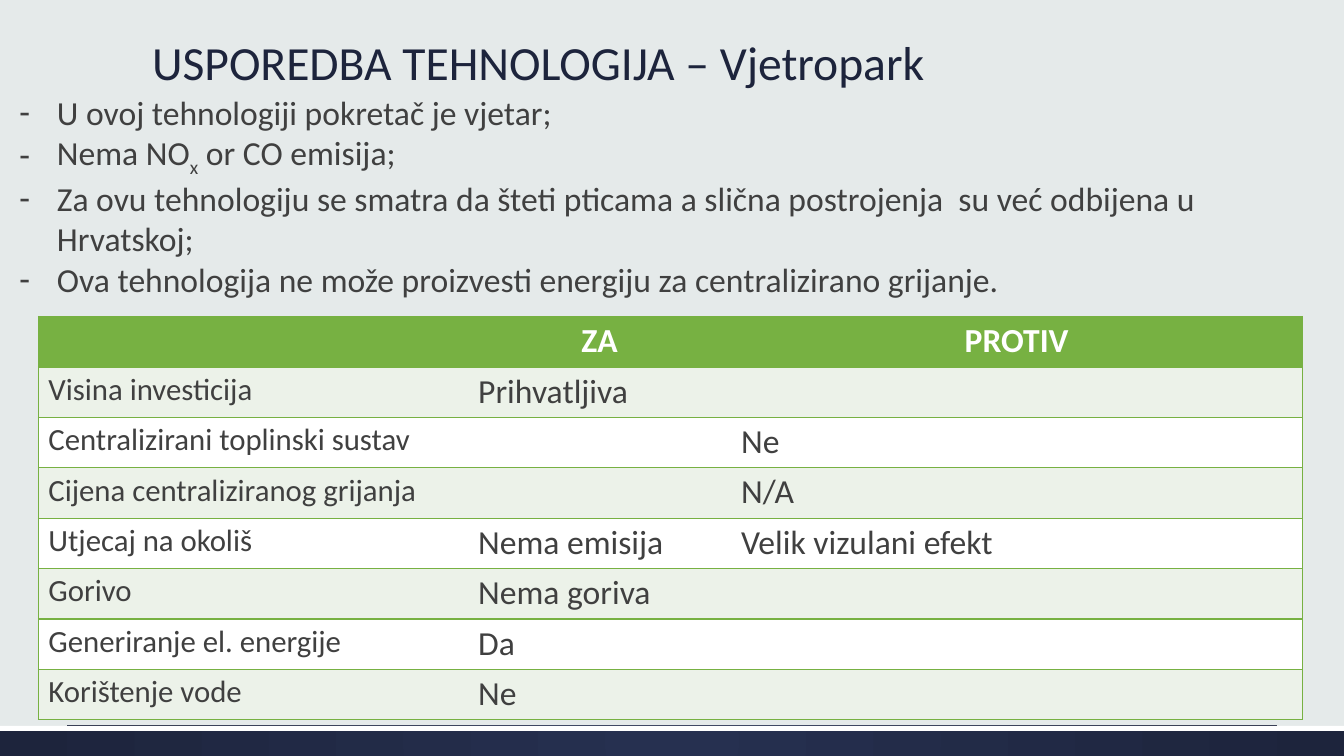
from dataclasses import dataclass

from lxml.etree import SubElement
from pptx import Presentation
from pptx.dml.color import RGBColor as Color
from pptx.enum.shapes import MSO_CONNECTOR as Connector, MSO_SHAPE as Shape
from pptx.enum.text import MSO_ANCHOR as Anchor, MSO_AUTO_SIZE as AutoSize, PP_ALIGN as Align
from pptx.oxml import parse_xml
from pptx.oxml.ns import nsdecls, qn
from pptx.util import Pt


@dataclass(frozen=True)
class Theme:
    """Colours, font and type sizes of the slide."""
    font: str = "Calibri"
    page: str = "E5EAEA"
    navy: str = "1D243C"
    navy_light: str = "263050"
    text: str = "404040"
    green: str = "77B142"
    band: str = "ECF2E9"
    white: str = "FFFFFF"
    title_size: int = 34
    body_size: int = 24
    label_size: int = 22


THEME = Theme()
PAGE_WIDTH, PAGE_HEIGHT = 960, 540
TITLE = "USPOREDBA TEHNOLOGIJA – Vjetropark"
POINTS = [
    ["U ovoj tehnologiji pokretač je vjetar;"],
    ["Nema NO", "x", " or CO emisija;"],
    ["Za ovu tehnologiju se smatra da šteti pticama a slična postrojenja  su već odbijena u Hrvatskoj;"],
    ["Ova tehnologija ne može proizvesti energiju za centralizirano grijanje."],
]
COMPARISON = [
    ("", "ZA", "PROTIV"),
    ("Visina investicija", "Prihvatljiva", ""),
    ("Centralizirani toplinski sustav", "", "Ne"),
    ("Cijena centraliziranog grijanja", "", "N/A"),
    ("Utjecaj na okoliš", "Nema emisija", "Velik vizulani efekt"),
    ("Gorivo", "Nema goriva", ""),
    ("Generiranje el. energije", "Da", ""),
    ("Korištenje vode", "Ne", ""),
]
COLUMN_SHARES = (0.34, 0.208, 0.452)


def rgb(value):
    """Turn a hex string into a colour."""
    return Color.from_string(value)


def place(shape, box):
    """Move a shape to a left, top, width, height box in points."""
    shape.left, shape.top, shape.width, shape.height = map(Pt, box)


def add_run(para, text, size, color, bold=False):
    """Append one formatted run to a paragraph."""
    span = para.add_run()
    span.text = text
    span.font.name, span.font.size, span.font.bold = THEME.font, Pt(size), bold
    span.font.color.rgb = rgb(color)
    return span


def add_title(page, box):
    """Fill the title placeholder."""
    title = page.shapes.title
    place(title, box)
    frame = title.text_frame
    frame.word_wrap, frame.vertical_anchor = True, Anchor.BOTTOM
    frame.auto_size = AutoSize.NONE
    para = frame.paragraphs[0]
    para.alignment, para.line_spacing = Align.LEFT, 0.9
    add_run(para, TITLE, THEME.title_size, THEME.navy)


def add_points(page, box):
    """Fill the body placeholder with the dashed list."""
    body = page.placeholders[1]
    place(body, box)
    frame = body.text_frame
    frame.word_wrap, frame.auto_size = True, AutoSize.NONE
    for index, parts in enumerate(POINTS):
        para = frame.add_paragraph() if index else frame.paragraphs[0]
        properties = para._p.get_or_add_pPr()
        properties.set("marL", str(Pt(27)))
        properties.set("indent", str(Pt(-27)))
        SubElement(properties, qn("a:buChar")).set("char", "-")
        para.space_before = Pt(0)
        for text in parts:
            span = add_run(para, text, THEME.body_size, THEME.text)
            if text == "x":
                span.font._element.set("baseline", "-25000")


def set_borders(cell, visible):
    """Draw the named sides of a cell in green and clear the others."""
    properties = cell._tc.get_or_add_tcPr()
    for index, side in enumerate("LRTB"):
        paint = (f'<a:solidFill><a:srgbClr val="{THEME.green}"/></a:solidFill>'
                 if side in visible else "<a:noFill/>")
        line = f'<a:ln{side} {nsdecls("a")} w="{Pt(1)}">{paint}</a:ln{side}>'
        properties.insert(index, parse_xml(line))


def add_comparison(page, box):
    """Build the table of arguments for and against."""
    row_count, column_count = len(COMPARISON), len(COLUMN_SHARES)
    table = page.shapes.add_table(row_count, column_count, *map(Pt, box)).table
    for column, share in zip(table.columns, COLUMN_SHARES):
        column.width = Pt(box[2] * share)
    for row_index, texts in enumerate(COMPARISON):
        table.rows[row_index].height = Pt(box[3] / row_count)
        header = row_index == 0
        fill = THEME.green if header else (THEME.white, THEME.band)[row_index % 2]
        for column_index, text in enumerate(texts):
            cell = table.cell(row_index, column_index)
            cell.margin_top = cell.margin_bottom = Pt(3)
            cell.fill.solid()
            cell.fill.fore_color.rgb = rgb(fill)
            set_borders(cell, ("LTB", "TB", "RTB")[column_index])
            if text:
                para = cell.text_frame.paragraphs[0]
                para.alignment = Align.CENTER if header else Align.LEFT
                size = THEME.body_size if column_index else THEME.label_size
                add_run(para, text, size, THEME.white if header else THEME.text, header)


def add_bar(page, box):
    """Add a plain white bar without an outline."""
    bar = page.shapes.add_shape(Shape.RECTANGLE, *map(Pt, box))
    bar.shadow.inherit = False
    bar.line.fill.background()
    bar.fill.solid()
    bar.fill.fore_color.rgb = rgb(THEME.white)
    return bar


def add_footer(page, box):
    """Draw the thin rule, the navy band and its white edge."""
    left, top, width, height = box
    rule = page.shapes.add_connector(
        Connector.STRAIGHT, Pt(left + 48), Pt(top), Pt(left + width - 48), Pt(top))
    rule.line.color.rgb, rule.line.width = rgb(THEME.text), Pt(0.75)
    SubElement(rule._element.spPr, qn("a:effectLst"))
    band = add_bar(page, box)
    band.fill.gradient()
    for stop, color in zip(band.fill.gradient_stops, (THEME.navy_light, THEME.navy)):
        stop.color.rgb = rgb(color)
    gradient = band._element.spPr.find(qn("a:gradFill"))
    gradient.replace(gradient.find(qn("a:lin")), parse_xml(
        f'<a:path {nsdecls("a")} path="circle">'
        '<a:fillToRect l="50000" t="50000" r="50000" b="50000"/></a:path>'))
    add_bar(page, (left, top, width, 3.6))


def main():
    """Build and save the deck."""
    deck = Presentation()
    deck.slide_width, deck.slide_height = Pt(PAGE_WIDTH), Pt(PAGE_HEIGHT)
    page = deck.slides.add_slide(deck.slide_layouts[1])
    page.background.fill.solid()
    page.background.fill.fore_color.rgb = rgb(THEME.page)
    add_footer(page, (0, 518.4, PAGE_WIDTH, 21.6))
    add_title(page, (101.5, -28.8, 748.8, 97.2))
    add_points(page, (6.5, 62, 953.5, 152.6))
    add_comparison(page, (27.4, 226.1, 902.9, 288))
    deck.save("out.pptx")


if __name__ == "__main__":
    main()
